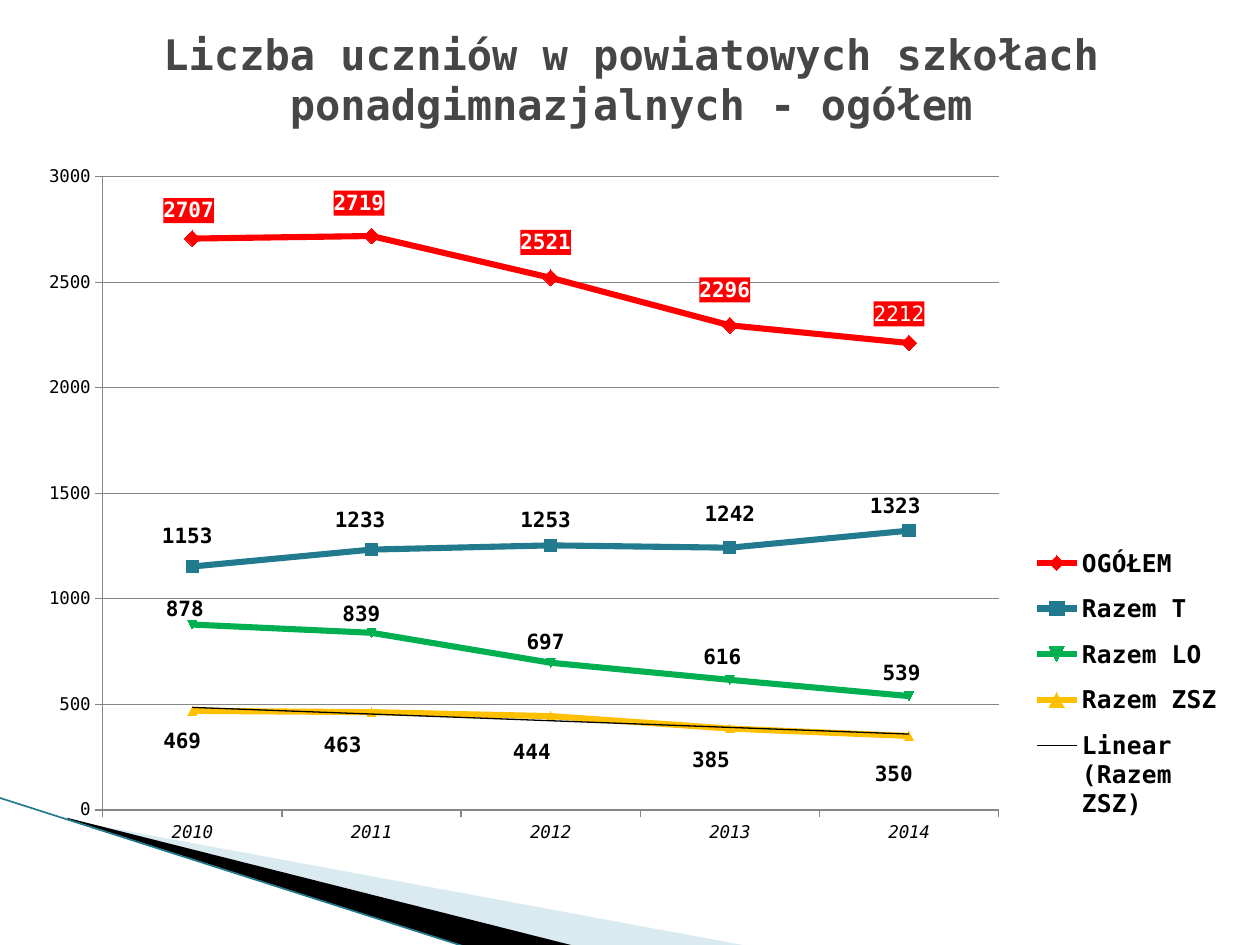
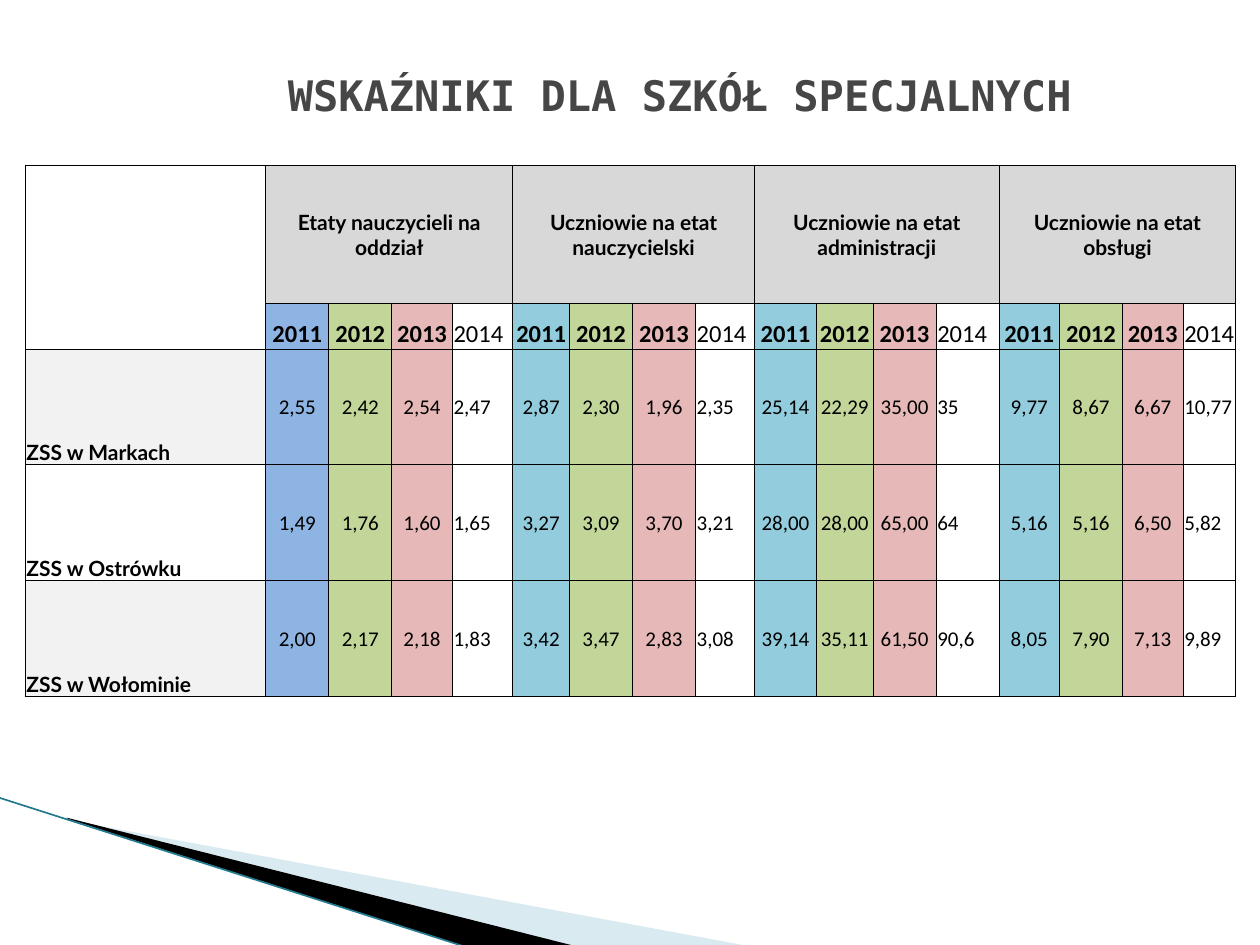
from dataclasses import dataclass
from typing import Any, NamedTuple

from lxml import etree
from pptx import Presentation
from pptx.chart.data import CategoryChartData
from pptx.dml.color import RGBColor
from pptx.enum.chart import (XL_CHART_TYPE, XL_LABEL_POSITION, XL_LEGEND_POSITION,
                             XL_MARKER_STYLE, XL_TICK_MARK)
from pptx.enum.shapes import MSO_CONNECTOR
from pptx.enum.text import MSO_ANCHOR, MSO_AUTO_SIZE, PP_ALIGN
from pptx.oxml import parse_xml
from pptx.oxml.ns import nsdecls, qn
from pptx.util import Emu, Pt

EMU_PER_PX = 9144  # 100 px to the inch
LINE_MARKERS = XL_CHART_TYPE.LINE_MARKERS
ABOVE, BELOW = XL_LABEL_POSITION.ABOVE, XL_LABEL_POSITION.BELOW
DIAMOND, SQUARE = XL_MARKER_STYLE.DIAMOND, XL_MARKER_STYLE.SQUARE
LEGEND_RIGHT = XL_LEGEND_POSITION.RIGHT
TICK_OUTSIDE, TICK_NONE = XL_TICK_MARK.OUTSIDE, XL_TICK_MARK.NONE
STRAIGHT = MSO_CONNECTOR.STRAIGHT
MIDDLE, BOTTOM = MSO_ANCHOR.MIDDLE, MSO_ANCHOR.BOTTOM
LEFT, CENTER = PP_ALIGN.LEFT, PP_ALIGN.CENTER
NO_AUTO_SIZE = MSO_AUTO_SIZE.NONE
TITLE_ONLY = 5


@dataclass(frozen=True)
class Theme:
    mono: str = "DejaVu Sans Mono"
    label_font: str = "Lato"
    number_font: str = "Calibri"
    title_size: int = 24
    large_size: int = 14
    text_size: int = 12
    axis_size: int = 10
    title: str = "464646"
    black: str = "000000"
    white: str = "FFFFFF"
    axis: str = "868686"
    pale_wedge: str = "A0CBDC"
    teal: str = "227A8F"
    red: str = "FF0000"
    green: str = "00B050"
    amber: str = "FFC000"
    group_header: str = "D8D8D8"
    row_label: str = "F2F2F2"
    first_2011: str = "8DB4E3"
    other_2011: str = "93CDDD"
    year_2012: str = "C2D69A"
    year_2013: str = "E6B9B8"


THEME = Theme()


class Box(NamedTuple):
    left: int
    top: int
    width: int
    height: int


class Wedge(NamedTuple):
    points: list[tuple[int, int]]
    color: str
    opacity: int


class PupilSeries(NamedTuple):
    name: str
    values: list[int]
    color: str
    marker: Any  # None lets the chart choose the symbol
    marker_size: int
    label_position: Any
    label_shifts: list[tuple[int, int]]


class CellStyle(NamedTuple):
    font: str
    size: int
    bold: bool
    align: Any
    anchor: Any
    fill: str | None


WEDGES = [
    Wedge([(55, 651), (595, 751), (456, 751), (55, 650)], THEME.pale_wedge, 40),
    Wedge([(53, 649), (457, 751), (372, 752), (54, 650)], THEME.black, 100),
]

CHART_BOX = Box(20, 123, 961, 559)
SCHOOL_YEARS = ["2010", "2011", "2012", "2013", "2014"]
PUPILS = [
    PupilSeries("OGÓŁEM", [2707, 2719, 2521, 2296, 2212], THEME.red, DIAMOND, 9, ABOVE,
                [(-3, -2), (-10, -6), (-4, -8), (-4, -8), (-8, -3)]),
    PupilSeries("Razem T", [1153, 1233, 1253, 1242, 1323], THEME.teal, SQUARE, 7, ABOVE,
                [(-4, -5), (-9, -5), (-4, -1), (0, -8), (-11, -1)]),
    PupilSeries("Razem LO", [878, 839, 697, 616, 539], THEME.green, None, 5, ABOVE,
                [(-6, 5), (-8, 3), (-4, 1), (-6, -1), (-6, -1)]),
    PupilSeries("Razem ZSZ", [469, 463, 444, 385, 350], THEME.amber, None, 5, BELOW,
                [(-8, 7), (-23, 9), (-15, 11), (-15, 8), (-12, 13)]),
]

TABLE_BOX = Box(20, 131, 961, 423)
COLUMN_WIDTHS = [191, 50, 50, 48, 48, 45, 50, 50, 47, 49, 45, 50, 50, 48, 50, 48, 42]
ROW_HEIGHTS = [110, 36, 92, 92, 92]
INDICATORS = ["Etaty nauczycieli na oddział", "Uczniowie na etat nauczycielski",
              "Uczniowie na etat administracji", "Uczniowie na etat obsługi"]
INDICATOR_YEARS = ["2011", "2012", "2013", "2014"]
SCHOOLS = {
    "ZSS w Markach": "2,55 2,42 2,54 2,47 2,87 2,30 1,96 2,35 "
                     "25,14 22,29 35,00 35 9,77 8,67 6,67 10,77",
    "ZSS w Ostrówku": "1,49 1,76 1,60 1,65 3,27 3,09 3,70 3,21 "
                      "28,00 28,00 65,00 64 5,16 5,16 6,50 5,82",
    "ZSS w Wołominie": "2,00 2,17 2,18 1,83 3,42 3,47 2,83 3,08 "
                       "39,14 35,11 61,50 90,6 8,05 7,90 7,13 9,89",
}


def px(length: int) -> Emu:
    return Emu(length * EMU_PER_PX)


def rgb(color: str) -> RGBColor:
    return RGBColor.from_string(color)


def format_font(font, name: str, size: int, color: str, bold: bool = False) -> None:
    font.name, font.size, font.bold = name, Pt(size), bold
    font.color.rgb = rgb(color)


def format_line(line, color: str, width: float) -> None:
    line.color.rgb = rgb(color)
    line.width = Pt(width)


def add_band(slide, layout) -> None:
    """Draw the corner band and move it to the layout, behind its placeholders."""
    band = []
    for wedge in WEDGES:
        builder = slide.shapes.build_freeform(*wedge.points[0], scale=EMU_PER_PX)
        builder.add_line_segments(wedge.points[1:])
        shape = builder.convert_to_shape()
        shape.shadow.inherit = False
        shape.fill.solid()
        shape.fill.fore_color.rgb = rgb(wedge.color)
        shape.line.fill.background()
        if wedge.opacity < 100:
            color = shape.element.spPr.find(qn("a:solidFill"))[0]
            etree.SubElement(color, qn("a:alpha"), val=str(wedge.opacity * 1000))
        band.append(shape)
    edge = slide.shapes.add_connector(STRAIGHT, px(-1), px(633), px(371), px(752))
    format_line(edge.line, THEME.teal, 0.95)
    etree.SubElement(edge.element.spPr, qn("a:effectLst"))
    band.append(edge)
    for index, shape in enumerate(band, start=2):
        layout.shapes.element.insert(index, shape.element)


def set_title(slide, text: str, box: Box, bottom_inset: int = 5) -> None:
    title = slide.shapes.title
    title.left, title.top, title.width, title.height = map(px, box)
    frame = title.text_frame
    frame.text = text
    frame.word_wrap = True
    frame.auto_size = NO_AUTO_SIZE
    frame.vertical_anchor = MIDDLE
    frame.margin_bottom = px(bottom_inset)
    paragraph = frame.paragraphs[0]
    paragraph.alignment = CENTER
    format_font(paragraph.runs[0].font, THEME.mono, THEME.title_size, THEME.title, True)


def set_layout(parent, index: int, **settings: Any) -> None:
    """Give a chart element a manual layout as its child number index."""
    for old in parent.findall(qn("c:layout")):
        parent.remove(old)
    layout = parse_xml(f"<c:layout {nsdecls('c')}><c:manualLayout/></c:layout>")
    for name, value in settings.items():
        etree.SubElement(layout[0], qn(f"c:{name}"), val=str(value))
    parent.insert(index, layout)


def solid_fill(color: str) -> str:
    return f'<a:solidFill><a:srgbClr val="{color}"/></a:solidFill>'


def fill_label(label, color: str) -> None:
    for old in label.findall(qn("c:spPr")):
        label.remove(old)
    label.find(qn("c:txPr")).addprevious(parse_xml(
        f"<c:spPr {nsdecls('c', 'a')}>{solid_fill(color)}</c:spPr>"))


def hide_leader_lines(labels) -> None:
    for old in labels.findall(qn("c:showLeaderLines")):
        labels.remove(old)
    etree.SubElement(labels, qn("c:showLeaderLines"), val="0")


def label_points(series, element, pupils: PupilSeries) -> None:
    is_total = pupils is PUPILS[0]
    color = THEME.white if is_total else THEME.black
    last = len(SCHOOL_YEARS) - 1
    series.data_labels.show_value = True
    format_font(series.data_labels.font, THEME.mono, THEME.text_size, color, True)
    for index in range(len(SCHOOL_YEARS)):
        label = series.points[index].data_label
        label.position = pupils.label_position
        format_font(label.font, THEME.mono, THEME.text_size, color,
                    not (is_total and index == last))

    labels = element.find(qn("c:dLbls"))
    hide_leader_lines(labels)
    point_labels = labels.findall(qn("c:dLbl"))
    for label, (right, down) in zip(point_labels, pupils.label_shifts):
        set_layout(label, 1, x=round(right / CHART_BOX.width, 4),
                   y=round(down / CHART_BOX.height, 4))
    if is_total:
        for label in [labels, *point_labels]:
            fill_label(label, pupils.color)


def format_series(series, pupils: PupilSeries) -> None:
    series.smooth = False
    format_line(series.format.line, pupils.color, 3.5)
    marker = series.marker
    if pupils.marker is not None:
        marker.style = pupils.marker
    marker.size = pupils.marker_size
    marker.format.fill.solid()
    marker.format.fill.fore_color.rgb = rgb(pupils.color)
    marker.format.line.color.rgb = rgb(pupils.color)


def add_trend_line(element) -> None:
    element.find(qn("c:cat")).addprevious(parse_xml(
        f'<c:trendline {nsdecls("c", "a")}><c:spPr><a:ln w="9525">{solid_fill(THEME.black)}'
        '</a:ln></c:spPr><c:trendlineType val="linear"/><c:dispRSqr val="0"/>'
        '<c:dispEq val="0"/></c:trendline>'))


def add_pupil_chart(slide) -> None:
    data = CategoryChartData()
    data.categories = SCHOOL_YEARS
    for pupils in PUPILS:
        data.add_series(pupils.name, pupils.values)
    chart = slide.shapes.add_chart(LINE_MARKERS, *map(px, CHART_BOX), data).chart
    chart.has_title = False
    format_font(chart.font, THEME.mono, THEME.axis_size, THEME.black)
    plot = chart.plots[0]
    plot.vary_by_categories = False
    elements = chart.element.xpath(".//c:ser")
    for series, element, pupils in zip(plot.series, elements, PUPILS):
        format_series(series, pupils)
        label_points(series, element, pupils)
    add_trend_line(elements[-1])

    for axis in (chart.category_axis, chart.value_axis):
        axis.major_tick_mark, axis.minor_tick_mark = TICK_OUTSIDE, TICK_NONE
        format_line(axis.format.line, THEME.axis, 0.75)
        format_font(axis.tick_labels.font, THEME.mono, THEME.axis_size, THEME.black)
    chart.category_axis.tick_labels.font.italic = True
    value_axis = chart.value_axis
    value_axis.minimum_scale, value_axis.maximum_scale, value_axis.major_unit = 0, 3000, 500
    format_line(value_axis.major_gridlines.format.line, THEME.axis, 0.75)

    chart.has_legend = True
    chart.legend.position = LEGEND_RIGHT
    chart.legend.include_in_layout = False
    format_font(chart.legend.font, THEME.mono, THEME.large_size, THEME.black, True)
    set_layout(chart.element.xpath(".//c:legend")[0], 1, xMode="edge", yMode="edge",
               x=0.825, y=0.535, w=0.17, h=0.43)
    set_layout(chart.element.xpath(".//c:plotArea")[0], 0, layoutTarget="inner",
               xMode="edge", yMode="edge", x=0.064, y=0.031, w=0.74, h=0.899)


def cell_style(row: int, column: int) -> CellStyle:
    if column == 0:
        fill = None if row < 2 else THEME.white if row == 3 else THEME.row_label
        return CellStyle(THEME.label_font, THEME.text_size, True, LEFT, BOTTOM, fill)
    if row == 0:
        return CellStyle(THEME.label_font, THEME.text_size, True, CENTER, MIDDLE,
                         THEME.group_header)
    group, year = divmod(column - 1, len(INDICATOR_YEARS))
    fills = [THEME.other_2011 if group else THEME.first_2011,
             THEME.year_2012, THEME.year_2013, None]
    is_header, is_latest = row == 1, year == 3
    return CellStyle(THEME.number_font, THEME.large_size if is_header else THEME.text_size,
                     is_header and not is_latest, LEFT if is_latest else CENTER,
                     BOTTOM if is_header else MIDDLE, fills[year])


def format_cell(cell, text: str, style: CellStyle) -> None:
    cell.text = text
    cell.margin_left = cell.margin_right = cell.margin_top = px(1)
    cell.margin_bottom = 0
    cell.vertical_anchor = style.anchor
    paragraph = cell.text_frame.paragraphs[0]
    paragraph.alignment = style.align
    for item in (paragraph, *paragraph.runs):
        format_font(item.font, style.font, style.size, THEME.black, style.bold)
    if style.fill is None:
        cell.fill.background()
    else:
        cell.fill.solid()
        cell.fill.fore_color.rgb = rgb(style.fill)


def add_indicator_table(slide) -> None:
    frame = slide.shapes.add_table(len(ROW_HEIGHTS), len(COLUMN_WIDTHS), *map(px, TABLE_BOX))
    table = frame.table
    table.first_row = table.horz_banding = False
    for column, width in zip(table.columns, COLUMN_WIDTHS):
        column.width = px(width)
    for row, height in zip(table.rows, ROW_HEIGHTS):
        row.height = px(height)
    for tc in frame.element.iter(qn("a:tc")):
        for side in ("lnL", "lnR", "lnT", "lnB"):
            tc.get_or_add_tcPr().append(parse_xml(
                f'<a:{side} {nsdecls("a")} w="6350">{solid_fill(THEME.black)}</a:{side}>'))

    span = len(INDICATOR_YEARS)
    headings = [text for name in INDICATORS for text in [name] + [""] * (span - 1)]
    rows = [[""] + headings, [""] + INDICATOR_YEARS * len(INDICATORS)]
    rows += [[school] + values.split() for school, values in SCHOOLS.items()]
    for row, texts in enumerate(rows):
        for column, text in enumerate(texts):
            format_cell(table.cell(row, column), text, cell_style(row, column))
    table.cell(0, 0).merge(table.cell(1, 0))
    for first in range(1, len(COLUMN_WIDTHS), span):
        table.cell(0, first).merge(table.cell(0, first + span - 1))


def main() -> None:
    presentation = Presentation()
    presentation.slide_width, presentation.slide_height = px(1000), px(750)
    layout = presentation.slide_layouts[TITLE_ONLY]

    pupil_slide = presentation.slides.add_slide(layout)
    add_band(pupil_slide, layout)
    set_title(pupil_slide, "Liczba uczniów w powiatowych szkołach ponadgimnazjalnych - ogółem",
              Box(51, 0, 900, 125))
    add_pupil_chart(pupil_slide)

    indicator_slide = presentation.slides.add_slide(layout)
    set_title(indicator_slide, "WSKAŹNIKI DLA SZKÓŁ SPECJALNYCH", Box(146, 50, 787, 81), 35)
    add_indicator_table(indicator_slide)
    presentation.save("out.pptx")


if __name__ == "__main__":
    main()
